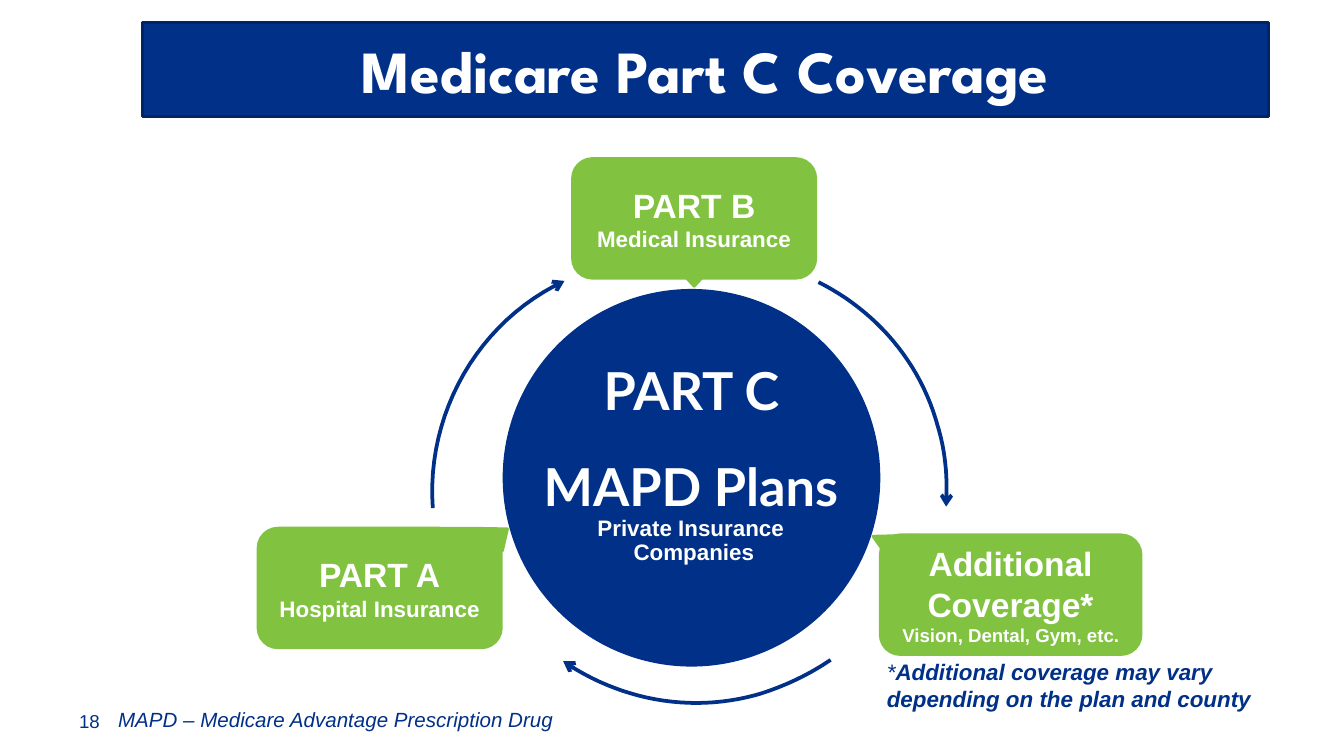
import pptx
import pptx.util
import pptx.dml.color
import pptx.enum.shapes
import pptx.enum.text
import pptx.oxml.ns
from lxml import etree

Inches = pptx.util.Inches
Pt = pptx.util.Pt
KIND = pptx.enum.shapes.MSO_SHAPE
ALIGN = pptx.enum.text.PP_ALIGN
ANCHOR = pptx.enum.text.MSO_ANCHOR
qn = pptx.oxml.ns.qn

NAVY, GREEN, WHITE = "003087", "81C341", "FFFFFF"


def color(code):
    return pptx.dml.color.RGBColor.from_string(code)


def style(run, size, ink, font="Arial", bold=False, slant=False):
    run.font.name = font
    run.font.size = Pt(size)
    run.font.bold = bold
    run.font.italic = slant
    run.font.color.rgb = color(ink)


def write(frame, paras, align=ALIGN.CENTER, space=None):
    """Fill a frame; each paragraph is a list of (text, style) runs."""
    for i, runs in enumerate(paras):
        para = frame.paragraphs[0] if i == 0 else frame.add_paragraph()
        para.alignment = align
        if space:
            para.line_spacing = space
        for text, look in runs:
            for j, line in enumerate(text.split("\n")):
                if j:
                    para.add_line_break()
                    # The break takes the text size, to keep line height
                    etree.SubElement(para._p[-1], qn("a:rPr"),
                                     sz=str(look["size"] * 100))
                if line:
                    run = para.add_run()
                    run.text = line
                    style(run, **look)


def paint(item, fill, line=None, width=1.5):
    item.shadow.inherit = False
    item.fill.solid()
    item.fill.fore_color.rgb = color(fill)
    if line:
        item.line.color.rgb = color(line)
        item.line.width = Pt(width)
    else:
        item.line.fill.background()


def shape(parent, kind, box, fill, line=None, turn=0):
    item = parent.add_shape(kind, *map(Inches, box))
    paint(item, fill, line)
    item.rotation = turn
    return item


def label(slide, box, paras, wrap=True, anchor=ANCHOR.TOP, **kind):
    frame = slide.shapes.add_textbox(*map(Inches, box)).text_frame
    frame.word_wrap = wrap
    frame.vertical_anchor = anchor
    if not wrap:
        frame.margin_left = frame.margin_right = 0
        frame.margin_top = frame.margin_bottom = 0
    write(frame, paras, **kind)


def callout(slide, box, paras, tip, turn):
    """Group a rounded card with the triangle that points at the circle."""
    group = slide.shapes.add_group_shape().shapes
    card = shape(group, KIND.ROUNDED_RECTANGLE, box, GREEN, GREEN)
    card.text_frame.word_wrap = True
    card.text_frame.vertical_anchor = ANCHOR.MIDDLE
    write(card.text_frame, paras)
    shape(group, KIND.ISOSCELES_TRIANGLE, tip, GREEN, GREEN, turn)


def bezier(a, b, c, d, steps=24):
    for i in range(1, steps + 1):
        t = i / steps
        u = 1 - t
        yield tuple(Inches(u**3 * p + 3 * u * u * t * q + 3 * u * t * t * r + t**3 * s)
                    for p, q, r, s in zip(a, b, c, d))


def arc(slide, start, *curves):
    """Draw an open arrow along cubic curves."""
    pen = slide.shapes.build_freeform(*map(Inches, start))
    for curve in curves:
        pen.add_line_segments(list(bezier(start, *curve)), close=False)
        start = curve[-1]
    item = pen.convert_to_shape()
    paint(item, WHITE, NAVY, 2)
    etree.SubElement(item.line._get_or_add_ln(), qn("a:tailEnd"), type="arrow")


def main():
    deck = pptx.Presentation()
    deck.slide_width, deck.slide_height = Inches(10), Inches(10 * 9 / 16)
    slide = deck.slides.add_slide(deck.slide_layouts[6])

    arc(slide, (6.09, 2.1),
        ((6.51, 2.31), (6.85, 2.69), (6.98, 3.18)),
        ((7.04, 3.38), (7.05, 3.57), (7.04, 3.77)))
    arc(slide, (3.22, 3.78), ((3.17, 3.07), (3.56, 2.39), (4.2, 2.09)))
    arc(slide, (6.18, 4.91),
        ((6.02, 5.02), (5.83, 5.11), (5.63, 5.17)),
        ((5.12, 5.31), (4.6, 5.2), (4.19, 4.92)))

    big = dict(size=28, ink=WHITE, font="Lato", bold=True)
    head = dict(size=18, ink=WHITE, bold=True)
    sub = dict(head, size=12)
    note = dict(size=12, ink=NAVY, slant=True)

    shape(slide.shapes, KIND.OVAL, (3.74, 2.15, 2.81, 2.81), NAVY)
    label(slide, (4.43, 2.72, 1.43, 0.42), [[("PART C", big)]], False, space=0.9)

    title = shape(slide.shapes, KIND.RECTANGLE, (1.06, 0.17, 8.38, 0.7), NAVY, "002464")
    title.text_frame.vertical_anchor = ANCHOR.MIDDLE
    write(title.text_frame, [[("Medicare Part C Coverage",
                               dict(big, size=32, font="League Spartan"))]])

    label(slide, (3.95, 3.43, 2.38, 0.79),
          [[("MAPD Plans", big)], [("Private Insurance\n Companies", sub)]],
          False, space=0.9)

    callout(slide, (6.55, 3.98, 1.94, 0.89),
            [[("Additional Coverage*", head)],
             [("Vision, Dental, Gym, etc.", dict(head, size=10))]],
            (6.47, 3.91, 0.31, 0.29), 296.7)
    callout(slide, (4.26, 1.18, 1.81, 0.89),
            [[("PART B\n", head), ("Medical Insurance", sub)]],
            (4.97, 1.92, 0.39, 0.21), 180)
    callout(slide, (1.92, 3.93, 1.81, 0.89),
            [[("PART A\n", head), ("Hospital Insurance", sub)]],
            (3.62, 3.91, 0.21, 0.13), 51.9)

    label(slide, (6.5, 4.85, 3.02, 0.5),
          [[("*", note),
            ("Additional coverage may vary depending on the plan and county",
             dict(note, bold=True))]], align=ALIGN.LEFT)
    label(slide, (0.49, 5.25, 0.58, 0.25), [[("18", dict(size=10, ink=NAVY))]],
          anchor=ANCHOR.BOTTOM, align=ALIGN.LEFT)
    label(slide, (0.78, 5.21, 3.58, 0.28),
          [[("MAPD – Medicare Advantage Prescription Drug", dict(note, size=11))]],
          align=ALIGN.LEFT)

    deck.save("out.pptx")


if __name__ == "__main__":
    main()
